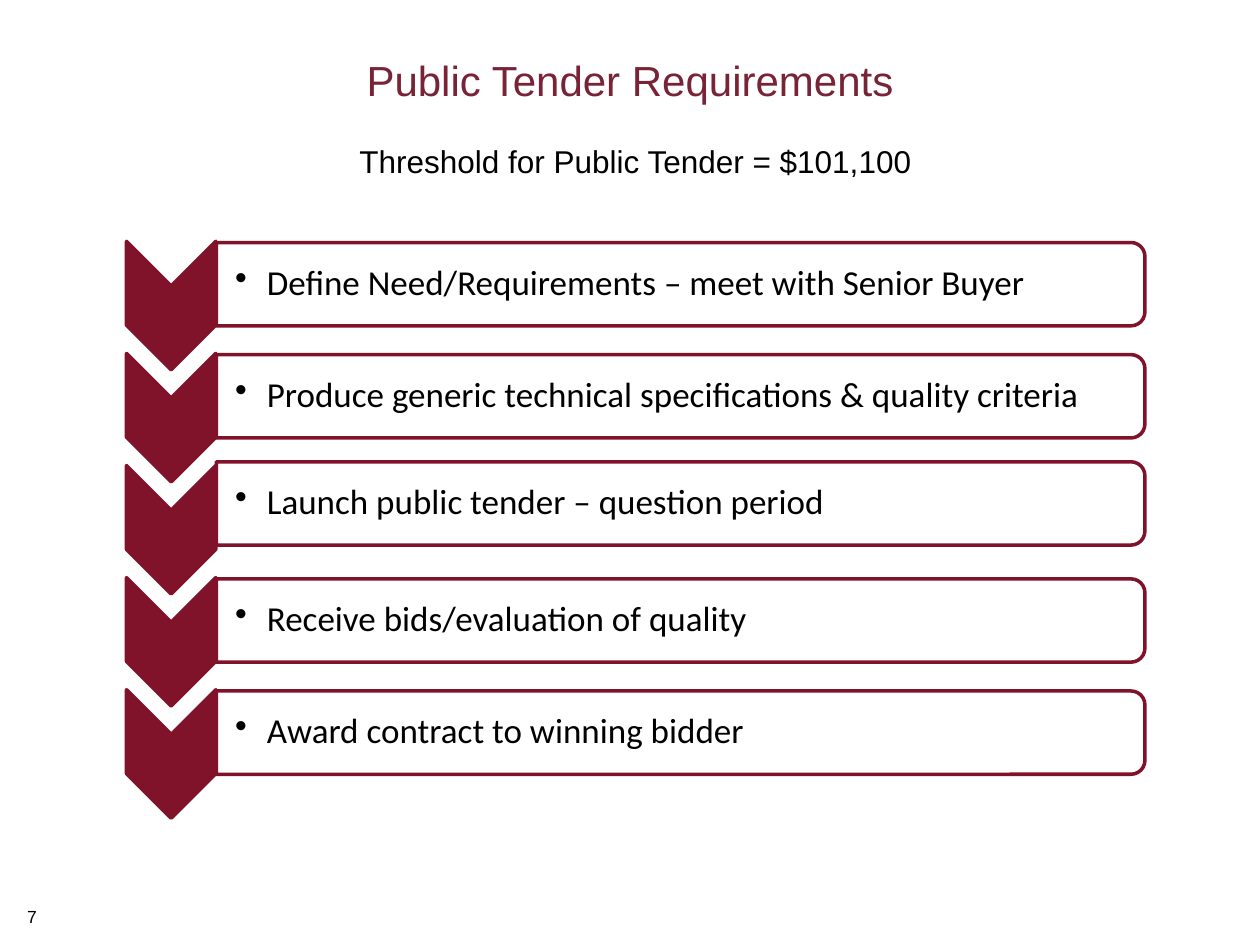
"""Build the public tender requirements slide with its five chevron steps."""
from dataclasses import dataclass

from lxml import etree
from pptx import Presentation
from pptx.dml.color import RGBColor
from pptx.enum.shapes import MSO_SHAPE
from pptx.enum.text import MSO_ANCHOR, PP_ALIGN
from pptx.oxml.ns import qn
from pptx.shapes.autoshape import Shape
from pptx.slide import Slide
from pptx.util import Cm, Pt

CHEVRON = MSO_SHAPE.CHEVRON
ROUNDED_BAR = MSO_SHAPE.ROUND_2_SAME_RECTANGLE
MIDDLE = MSO_ANCHOR.MIDDLE
CENTER = PP_ALIGN.CENTER
LEFT = PP_ALIGN.LEFT

BURGUNDY = RGBColor(0x80, 0x13, 0x29)
TITLE_COLOR = RGBColor(0x78, 0x23, 0x36)
BLACK = RGBColor(0, 0, 0)
WHITE = RGBColor(255, 255, 255)

STEP_PITCH = 2.26
CHEVRON_CENTER = (3.45, 6.16)
BAR_CENTER = (13.72, 5.73)


@dataclass
class Step:
    """One stage of the tender, with an optional upward shift of its bar in cm."""
    text: str
    lift: float = 0


STEPS = [
    Step("Define Need/Requirements – meet with Senior Buyer"),
    Step("Produce generic technical specifications & quality criteria"),
    Step("Launch public tender – question period", lift=0.1),
    Step("Receive bids/evaluation of quality"),
    Step("Award contract to winning bidder"),
]


def write_text(shape: Shape, text: str, size: float, color: RGBColor = BLACK,
               font: str = "Arial", alignment: PP_ALIGN = CENTER) -> None:
    """Put one formatted paragraph in a shape."""
    frame = shape.text_frame
    frame.text = text
    frame.word_wrap = True
    frame.vertical_anchor = MIDDLE
    paragraph = frame.paragraphs[0]
    paragraph.alignment = alignment
    run_font = paragraph.runs[0].font
    run_font.name = font
    run_font.size = Pt(size)
    run_font.color.rgb = color


def add_text(slide: Slide, left: float, top: float, width: float, height: float) -> Shape:
    """Add an empty text box measured in cm."""
    return slide.shapes.add_textbox(Cm(left), Cm(top), Cm(width), Cm(height))


def add_turned_shape(slide: Slide, preset: MSO_SHAPE, center: tuple[float, float],
                     width: float, height: float, fill: RGBColor) -> Shape:
    """Add a burgundy-edged shape turned clockwise by a quarter about its centre."""
    x, y = center
    shape = slide.shapes.add_shape(preset, Cm(x - width / 2), Cm(y - height / 2),
                                   Cm(width), Cm(height))
    shape.rotation = 90
    shape.shadow.inherit = False
    shape.fill.solid()
    shape.fill.fore_color.rgb = fill
    shape.line.color.rgb = BURGUNDY
    shape.line.width = Pt(2)
    return shape


def set_opacity(shape: Shape, percent: int) -> None:
    """Set the opacity of a solid fill."""
    color = shape.fill._xPr.find(qn("a:solidFill"))[0]
    etree.SubElement(color, qn("a:alpha"), val=str(percent * 1000))


def add_bullet(shape: Shape) -> None:
    """Give the first paragraph a hanging bullet."""
    properties = shape.text_frame.paragraphs[0]._p.get_or_add_pPr()
    properties.set("marL", str(Cm(0.64)))
    properties.set("indent", str(-Cm(0.64)))
    etree.SubElement(properties, qn("a:buChar"), char="•")


def add_step(slide: Slide, index: int, step: Step) -> None:
    """Draw a chevron, its bar and its bulleted label."""
    offset = index * STEP_PITCH
    x, y = CHEVRON_CENTER
    add_turned_shape(slide, CHEVRON, (x, y + offset), 2.59, 1.8, BURGUNDY)
    x, y = BAR_CENTER
    y += offset - step.lift
    bar = add_turned_shape(slide, ROUNDED_BAR, (x, y), 1.68, 18.72, WHITE)
    set_opacity(bar, 90)
    label = add_text(slide, 4.34, y - 0.76, 18.64, 1.52)
    write_text(label, step.text, 20, font="Calibri", alignment=LEFT)
    frame = label.text_frame
    frame.margin_left = Cm(0.4)
    frame.margin_top = frame.margin_right = frame.margin_bottom = Cm(0.03)
    frame.paragraphs[0].line_spacing = 0.9
    add_bullet(label)


def main() -> None:
    """Assemble and save the slide."""
    presentation = Presentation()
    presentation.slide_width = Cm(25.4)
    presentation.slide_height = Cm(19.05)
    slide = presentation.slides.add_slide(presentation.slide_layouts[5])

    title = slide.shapes.title
    title.left, title.top, title.width, title.height = Cm(1.9), Cm(1.07), Cm(21.6), Cm(1.07)
    write_text(title, "Public Tender Requirements", 24, TITLE_COLOR)

    threshold = add_text(slide, 2.01, 2.74, 21.6, 1.02)
    write_text(threshold, "Threshold for Public Tender = $101,100", 18)

    for index, step in enumerate(STEPS):
        add_step(slide, index, step)

    page_number = add_text(slide, 0.3, 18.14, 2.21, 0.69)
    write_text(page_number, "7", 10, alignment=LEFT)
    presentation.save("out.pptx")


if __name__ == "__main__":
    main()
